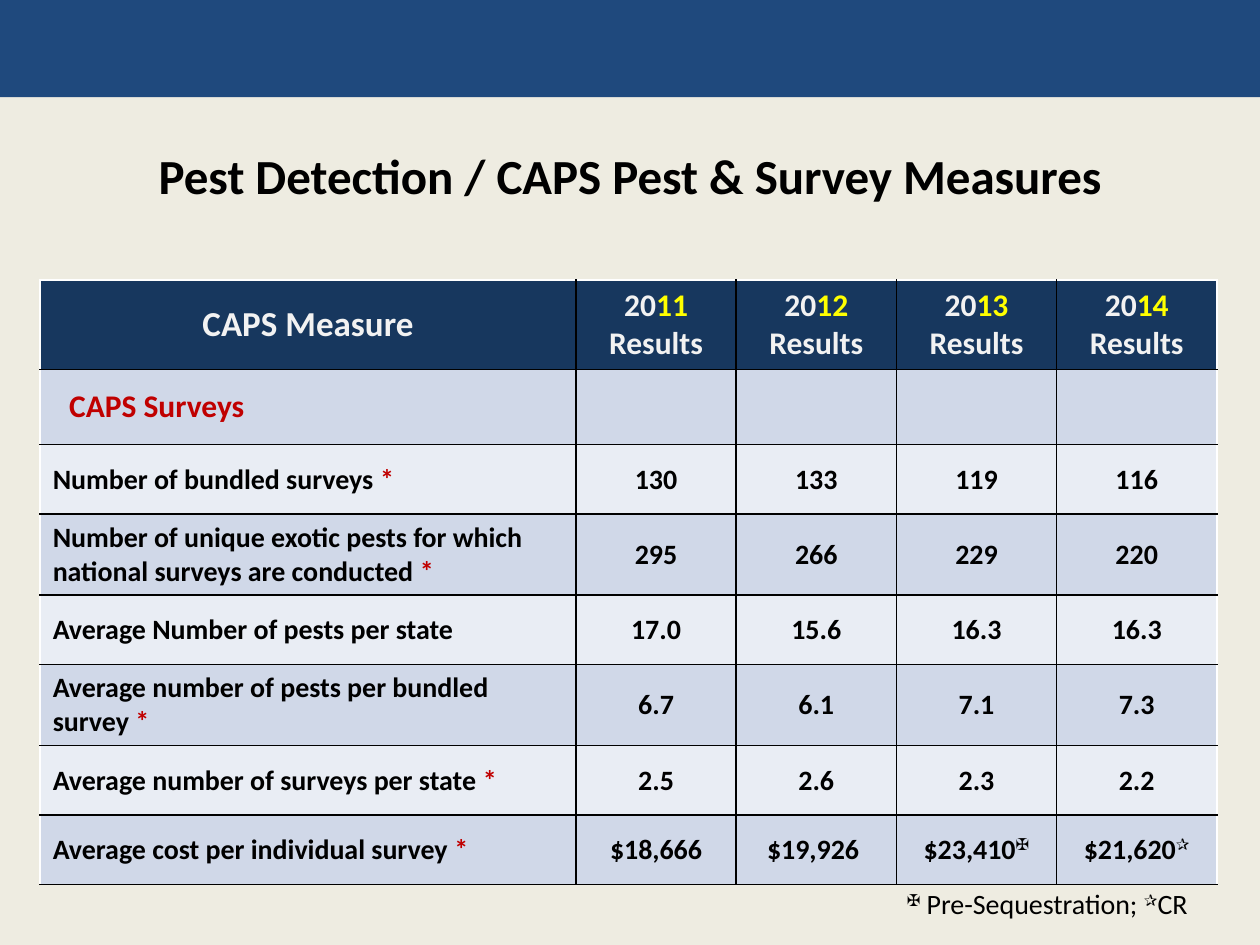
from lxml.etree import SubElement as Sub
from pptx import Presentation
from pptx.dml.color import RGBColor
from pptx.enum.shapes import MSO_SHAPE as Kind
from pptx.enum.text import MSO_ANCHOR as Anchor, MSO_AUTO_SIZE as Fit, PP_ALIGN as Align
from pptx.oxml.ns import qn
from pptx.util import Cm, Pt

HUES = {
    "sand": "EEECE1", "blue": "1F497D", "navy": "17375E", "pale": "F2F2F2",
    "gold": "FFFF00", "red": "C00000", "black": "000000", "white": "FFFFFF",
    "dark": "D0D8E8", "light": "E9EDF4",
}
STAR = ("*", {"hue": "red"})
CROSS = ("✠", {"high": True})
SPARK = ("✰", {"high": True})

# Each row: label pieces, then one value per year
YEARS = ["11", "12", "13", "14"]
ROWS = [
    (["Number of bundled surveys ", STAR], ["130", "133", "119", "116"]),
    (["Number of unique exotic pests for which national surveys are conducted ", STAR],
     ["295", "266", "229", "220"]),
    (["Average Number of pests per state"], ["17.0", "15.6", "16.3", "16.3"]),
    (["Average number of pests per bundled survey ", STAR], ["6.7", "6.1", "7.1", "7.3"]),
    (["Average number of surveys per state ", STAR], ["2.5", "2.6", "2.3", "2.2"]),
    (["Average cost per individual survey ", STAR],
     ["$18,666", "$19,926 ", ["$23,410", CROSS], ["$21,620", SPARK]]),
]


def color(name):
    return RGBColor.from_string(HUES[name])


class Deck:
    font = "Calibri"

    def __init__(self):
        self.prs = Presentation()
        self.prs.slide_width, self.prs.slide_height = Cm(25.4), Cm(19.05)
        self.slide = self.prs.slides.add_slide(self.prs.slide_layouts[5])
        fill = self.slide.background.fill
        fill.solid()
        fill.fore_color.rgb = color("sand")

    def text(self, para, parts, size, hue="black", bold=True, align=Align.LEFT, shade=False):
        """Fill a paragraph with strings or (string, style) pairs."""
        para.alignment = align
        font = para.font
        font.name, font.size, font.bold = self.font, Pt(size), bold
        for part in [parts] if isinstance(parts, str) else parts:
            words, look = (part, {}) if isinstance(part, str) else part
            run = para.add_run()
            run.text = words
            run.font.color.rgb = color(look.get("hue", hue))
            if "bold" in look:
                run.font.bold = look["bold"]
            props = run._r.get_or_add_rPr()
            if look.get("high"):
                props.set("baseline", "30000")
            if shade:
                self.shade(props)

    def shade(self, props):
        glow = Sub(Sub(props, qn("a:effectLst")), qn("a:outerShdw"),
                   blurRad="38100", dist="38100", dir="2700000")
        tint = Sub(glow, qn("a:srgbClr"), val=HUES["black"])
        Sub(tint, qn("a:alpha"), val="43000")

    def band(self, *box):
        bar = self.slide.shapes.add_shape(Kind.RECTANGLE, *map(Cm, box))
        bar.shadow.inherit = False
        bar.fill.solid()
        bar.fill.fore_color.rgb = color("blue")
        bar.line.fill.background()

    def title(self, words, *box):
        head = self.slide.shapes.title
        head.left, head.top, head.width, head.height = map(Cm, box)
        frame = head.text_frame
        frame.vertical_anchor = Anchor.MIDDLE
        self.text(frame.paragraphs[0], words, 28, align=Align.CENTER, shade=True)

    def note(self, parts, *box):
        frame = self.slide.shapes.add_textbox(*map(Cm, box)).text_frame
        frame.word_wrap = True
        frame.auto_size = Fit.SHAPE_TO_FIT_TEXT
        self.text(frame.paragraphs[0], parts, 16, bold=False, shade=True)

    def table(self, left, top, wides, highs):
        grid = self.slide.shapes.add_table(
            len(highs), len(wides), Cm(left), Cm(top), Cm(sum(wides)), Cm(sum(highs))).table
        for col, wide in zip(grid.columns, wides):
            col.width = Cm(wide)
        for row, high in zip(grid.rows, highs):
            row.height = Cm(high)
        last = len(wides) - 1
        for r in range(len(highs)):
            for c in range(len(wides)):
                cell = grid.cell(r, c)
                cell.vertical_anchor = Anchor.MIDDLE
                # White on the outer left, top and right; black elsewhere
                self.edges(cell, {"L": c == 0, "R": c == last, "T": r == 0, "B": False})
                cell.fill.solid()
                cell.fill.fore_color.rgb = color(
                    "navy" if r == 0 else "dark" if r % 2 else "light")
        return grid

    def edges(self, cell, sides):
        props = cell._tc.get_or_add_tcPr()
        for side, outer in sides.items():
            line = Sub(props, qn("a:ln" + side), w=str(Pt(1)))
            Sub(Sub(line, qn("a:solidFill")), qn("a:srgbClr"),
                val=HUES["white" if outer else "black"])

    def cell(self, grid, row, col, parts, size, **look):
        self.text(grid.cell(row, col).text_frame.paragraphs[0], parts, size, **look)


def main():
    deck = Deck()

    # Top band and title
    deck.band(0, 0, 25.4, 1.96)
    deck.title("Pest Detection / CAPS Pest & Survey Measures", 1.27, 2.54, 22.86, 1.98)

    # Table header and section row
    grid = deck.table(0.81, 5.64, [10.8] + [3.23] * 4, [1.27, 1.52] + [1.4] * 6)
    mid = {"align": Align.CENTER}
    deck.cell(grid, 0, 0, "CAPS Measure", 20, hue="pale", **mid)
    for c, year in enumerate(YEARS, 1):
        parts = ["20", (year + " ", {"hue": "gold"}), "Results"]
        deck.cell(grid, 0, c, parts, 18, hue="pale", **mid)
    deck.cell(grid, 1, 0, "CAPS Surveys", 18, hue="red")
    indent = grid.cell(1, 0).text_frame.paragraphs[0]._p.get_or_add_pPr()
    indent.set("marL", str(Cm(0.33)))

    # Measures
    for r, (label, values) in enumerate(ROWS, 2):
        deck.cell(grid, r, 0, label, 16)
        for c, value in enumerate(values, 1):
            deck.cell(grid, r, c, value, 16, **mid)

    # Footnote
    spark = (SPARK[0], {"high": True, "bold": True})
    deck.note([CROSS, " Pre-Sequestration; ", spark, "CR"], 18.03, 17.75, 6.45, 0.94)

    deck.prs.save("out.pptx")


if __name__ == "__main__":
    main()
